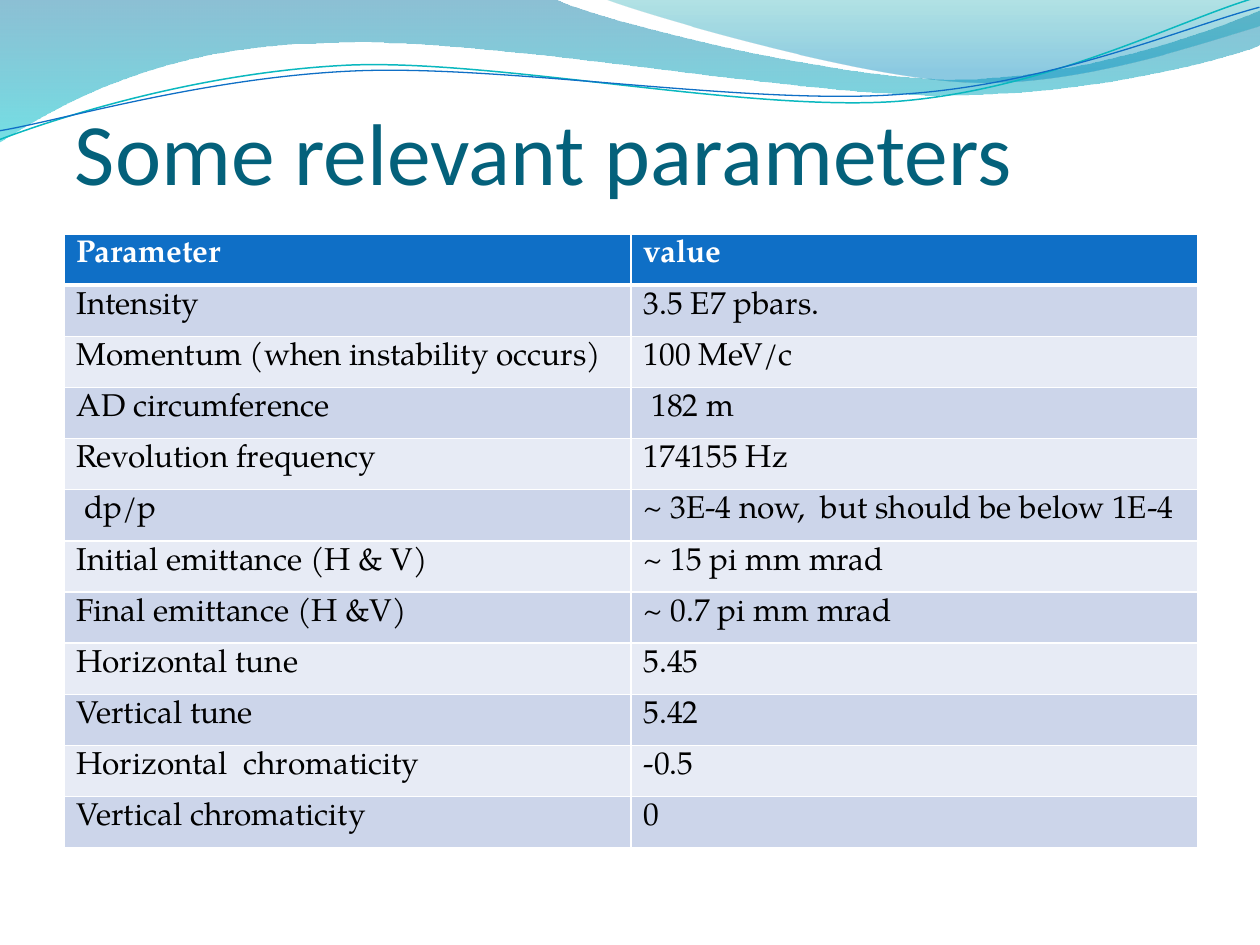
"""Build the slide of relevant machine parameters under a wave banner."""
import lxml.etree
import pptx
import pptx.dml.color
import pptx.enum.text
import pptx.oxml.ns
import pptx.util

PX = pptx.util.Inches(1) / 126
THEME = {
    "title": "04617B", "head": "0F6FC6", "bands": ("CCD5EA", "E7EBF5"),
    "text": "000000", "light": "FFFFFF",
    "title_font": "Calibri", "body_font": "TeX Gyre Pagella",
    "title_size": 50, "body_size": 18,
    "wide_wave": ((0, "0074A1", 45), (1, "00C6CF", 55)),
    "right_wave": ((0, "00A1A9", 30), (0.8, "008BBF", 45)),
    "teal_line": "0AB8BF", "blue_line": "0F6FC6",
}


def rgb(name):
    return pptx.dml.color.RGBColor.from_string(name)


def draw_outline(shapes, start, segments, close):
    builder = shapes.build_freeform(*start, scale=PX)
    builder.add_line_segments([point for segment in segments for point in segment], close=close)
    outline = builder.convert_to_shape()
    outline.shadow.inherit = False
    steps = iter(list(outline.element.spPr.iter(pptx.oxml.ns.qn("a:lnTo"))))
    for segment in segments:
        first, *others = [next(steps) for point in segment]
        if others:
            first.tag = pptx.oxml.ns.qn("a:cubicBezTo")
            for other in others:
                first.append(other[0])
                other.getparent().remove(other)
    return outline


deck = pptx.Presentation()
deck.slide_width = round(1260 * PX)
deck.slide_height = round(945 * PX)
slide = deck.slides.add_slide(deck.slide_layouts[6])

waves = [
    ("wide_wave", (0, 0), [
        [(554, -1)],
        [(600, 21), (837, 79), (955, 79)],
        [(1075, 79), (1207, 33), (1260, 11)],
        [(1261, 45)],
        [(1239, 55), (1096, 96), (940, 95)],
        [(784, 95), (481, 35), (324, 43)],
        [(163, 45), (58, 105), (-1, 142)],
        [(0, 0)],
    ]),
    ("right_wave", (604, -1), [
        [(641, 14), (859, 78), (969, 82)],
        [(1079, 87), (1211, 40), (1260, 26)],
        [(1260, 0)],
        [(604, -1)],
    ]),
]
for name, start, segments in waves:
    wave = draw_outline(slide.shapes, start, segments, True)
    wave.line.fill.background()
    wave.fill.gradient()
    wave.fill.gradient_angle = 270
    for stop, (position, color, opacity) in zip(wave.fill.gradient_stops, THEME[name]):
        stop.position = position
        stop.color.rgb = rgb(color)
    for tint, (position, color, opacity) in zip(wave.element.spPr.iter(pptx.oxml.ns.qn("a:srgbClr")), THEME[name]):
        lxml.etree.SubElement(tint, pptx.oxml.ns.qn("a:alpha"), val=str(opacity * 1000))

ripples = [
    ("teal_line", 0.85, (-3, 110), [
        [(59, 90), (200, 52), (350, 52)],
        [(498, 53), (745, 118), (897, 114)],
        [(1048, 109), (1184, 45), (1260, 27)],
    ]),
    ("blue_line", 0.75, (-2, 101), [
        [(58, 94), (207, 57), (357, 58)],
        [(508, 59), (751, 112), (902, 107)],
        [(1053, 104), (1187, 53), (1262, 37)],
    ]),
]
for name, width, start, segments in ripples:
    ripple = draw_outline(slide.shapes, start, segments, False)
    ripple.rotation = 357.3
    ripple.fill.background()
    ripple.line.color.rgb = rgb(THEME[name])
    ripple.line.width = pptx.util.Pt(width)

title = slide.shapes.add_textbox(*(round(n * PX) for n in (75, 45, 1134, 158))).text_frame
title.word_wrap = True
title.vertical_anchor = pptx.enum.text.MSO_ANCHOR.BOTTOM
title.margin_left = title.margin_right = title.margin_bottom = 0
title.margin_top = round(6 * PX)
title.text = "Some relevant parameters"
title_font = title.paragraphs[0].runs[0].font
title_font.name = THEME["title_font"]
title_font.size = pptx.util.Pt(THEME["title_size"])
title_font.color.rgb = rgb(THEME["title"])

parameters = [
    ("Parameter", "value"),
    ("Intensity", "3.5 E7 pbars."),
    ("Momentum (when instability occurs)", "100 MeV/c"),
    ("AD circumference", " 182 m"),
    ("Revolution frequency", "174155 Hz"),
    (" dp/p", "~ 3E-4 now,  but should be below 1E-4"),
    ("Initial emittance (H & V)", "~ 15 pi mm mrad"),
    ("Final emittance (H &V)", "~ 0.7 pi mm mrad"),
    ("Horizontal tune", "5.45"),
    ("Vertical tune", "5.42"),
    ("Horizontal  chromaticity", "-0.5"),
    ("Vertical chromaticity", "0"),
]
grid = slide.shapes.add_table(
    len(parameters), 2, *(round(n * PX) for n in (64, 234, 1134, 614))
).table
for row, entries in enumerate(parameters):
    for column, entry in enumerate(entries):
        cell = grid.cell(row, column)
        cell.text_frame.text = entry
        font = cell.text_frame.paragraphs[0].runs[0].font
        font.name = THEME["body_font"]
        font.size = pptx.util.Pt(THEME["body_size"])
        font.bold = row == 0
        font.color.rgb = rgb(THEME["light" if row == 0 else "text"])
        cell.fill.solid()
        cell.fill.fore_color.rgb = rgb(THEME["head"] if row == 0 else THEME["bands"][(row - 1) % 2])

for cell in grid.rows[0].cells:
    for order, (side, width) in enumerate({"a:lnL": 1, "a:lnR": 1, "a:lnT": 1, "a:lnB": 3}.items()):
        border = lxml.etree.Element(pptx.oxml.ns.qn(side), w=str(pptx.util.Pt(width)))
        ink = lxml.etree.SubElement(border, pptx.oxml.ns.qn("a:solidFill"))
        lxml.etree.SubElement(ink, pptx.oxml.ns.qn("a:srgbClr"), val=THEME["light"])
        cell._tc.tcPr.insert(order, border)

deck.save("out.pptx")
